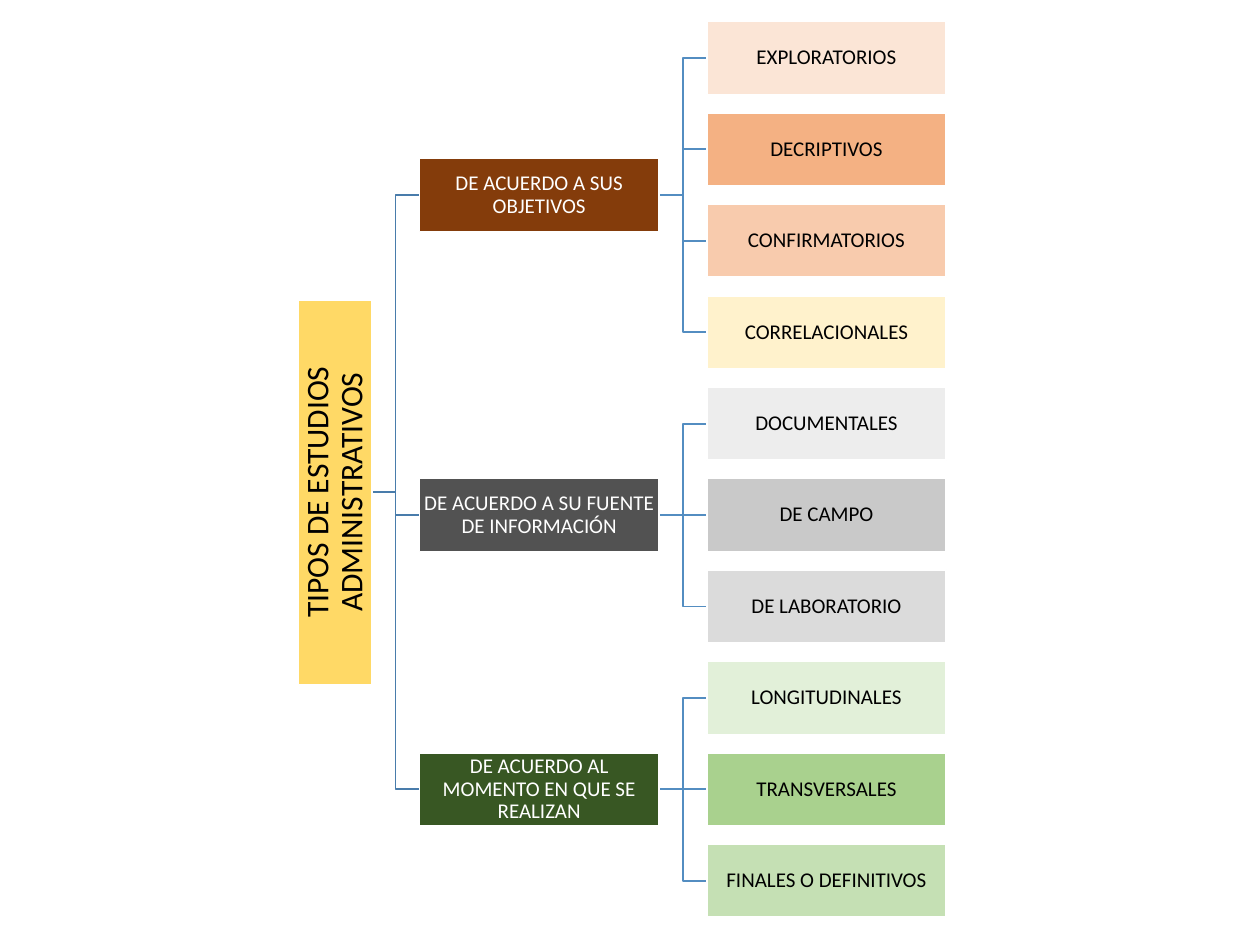
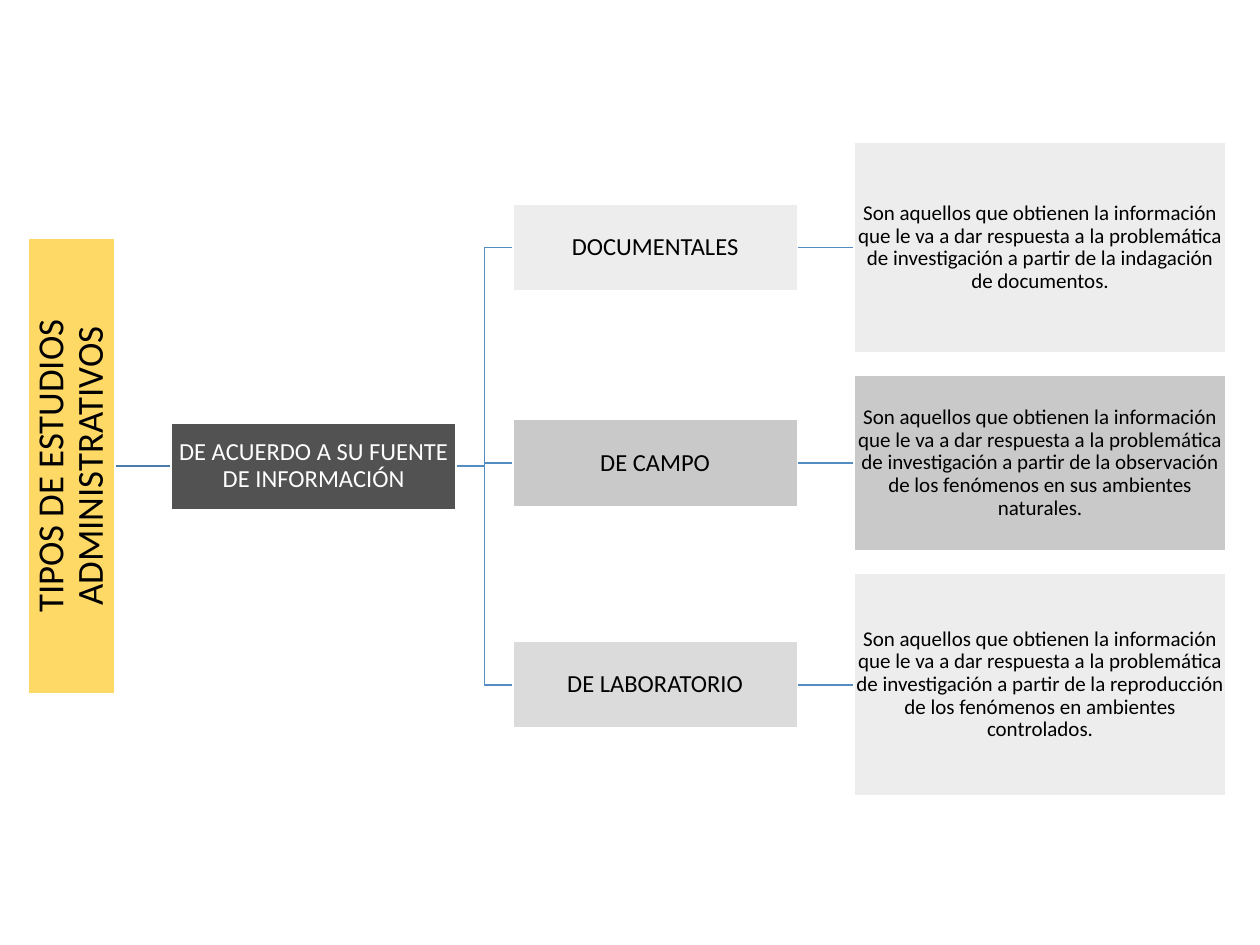
from dataclasses import dataclass, field

from lxml import etree
from pptx import Presentation
from pptx import util as u
from pptx.dml.color import RGBColor
from pptx.enum import shapes, text
from pptx.oxml import ns


@dataclass(frozen=True)
class Theme:
    font: str = "Calibri"
    black: str = "000000"
    white: str = "FFFFFF"
    root_fill: str = "FFD966"
    brown: str = "843C0B"
    charcoal: str = "525252"
    forest: str = "385723"
    oranges: tuple = ("FBE5D6", "F4B183", "F8CBAD", "FFF2CC")
    greys: tuple = ("EDEDED", "C9C9C9", "DBDBDB")
    greens: tuple = ("E2F0D9", "A9D18E", "C5E0B4")
    root_link: str = "497CAB"
    branch_link: str = "538DC1"
    line_width: float = 1
    line_spacing: float = 0.9
    overview_sizes: tuple = (18, 12, 12)
    detail_sizes: tuple = (21, 14, 14, 12)


THEME = Theme()
ROOT_TEXT = "TIPOS DE ESTUDIOS ADMINISTRATIVOS"
SOURCE_TEXT = "DE ACUERDO A SU FUENTE DE INFORMACIÓN"
SOURCE_TYPES = ("DOCUMENTALES", "DE CAMPO", "DE LABORATORIO")
DEFINITION = (
    "Son aquellos que obtienen la información que le va a dar respuesta "
    "a la problemática de investigación a partir de la {}."
)


@dataclass
class Node:
    text: str
    fill: str
    children: list = field(default_factory=list)
    color: str = THEME.black
    height: float = 0
    middle: float = 0


@dataclass(frozen=True)
class Layout:
    left: float
    top: float
    bottom: float
    column_gap: float
    box_height: float
    root_length: float
    widths: tuple
    sizes: tuple

    def column_left(self, level):
        return self.left + sum(self.widths[:level]) + level * self.column_gap

    def column_right(self, level):
        return self.column_left(level) + self.widths[level]


def rgb(value):
    return RGBColor.from_string(value)


def leaves(node):
    if not node.children:
        return [node]
    return [leaf for child in node.children for leaf in leaves(child)]


def center_on_children(node):
    for child in node.children:
        center_on_children(child)
    if node.children:
        node.middle = (node.children[0].middle + node.children[-1].middle) / 2


def arrange(root, layout):
    ends = leaves(root)
    heights = [leaf.height or layout.box_height for leaf in ends]
    gap = (layout.bottom - layout.top - sum(heights)) / (len(ends) - 1)
    top = layout.top
    for leaf, height in zip(ends, heights):
        leaf.middle = top + height / 2
        top += height + gap
    center_on_children(root)


def style_line(line, color):
    line.color.rgb = rgb(color)
    line.width = u.Pt(THEME.line_width)


def add_straight_link(slide, start, end, color):
    connector = slide.shapes.add_connector(
        shapes.MSO_CONNECTOR.STRAIGHT, *map(u.Inches, start + end)
    )
    style_line(connector.line, color)
    etree.SubElement(connector._element.spPr, ns.qn("a:effectLst"))


def add_bent_link(slide, start, end, color):
    bend = (start[0] + end[0]) / 2
    corners = (start, (bend, start[1]), (bend, end[1]), end)
    first, *others = [(u.Inches(x), u.Inches(y)) for x, y in corners]
    builder = slide.shapes.build_freeform(*first)
    builder.add_line_segments(others, close=False)
    shape = builder.convert_to_shape()
    shape.fill.background()
    shape.shadow.inherit = False
    style_line(shape.line, color)


def add_links(slide, node, layout, level=0):
    color = THEME.branch_link if level else THEME.root_link
    for child in node.children:
        start = (layout.column_right(level), node.middle)
        end = (layout.column_left(level + 1), child.middle)
        is_level = abs(start[1] - end[1]) < 0.01
        add_link = add_straight_link if is_level else add_bent_link
        add_link(slide, start, end, color)
        add_links(slide, child, layout, level + 1)


def add_box(slide, node, layout, level):
    width, height = layout.widths[level], node.height or layout.box_height
    center = layout.column_left(level) + width / 2
    if level == 0:
        width, height = layout.root_length, layout.widths[0]
    shape = slide.shapes.add_shape(
        shapes.MSO_SHAPE.RECTANGLE,
        u.Inches(center - width / 2),
        u.Inches(node.middle - height / 2),
        u.Inches(width),
        u.Inches(height),
    )
    shape.rotation = 0 if level else 270
    shape.shadow.inherit = False
    shape.fill.solid()
    shape.fill.fore_color.rgb = rgb(node.fill)
    style_line(shape.line, THEME.white)
    write_label(shape.text_frame, node, layout.sizes[level])


def write_label(frame, node, size):
    frame.text = node.text
    frame.word_wrap = True
    frame.vertical_anchor = text.MSO_ANCHOR.MIDDLE
    frame.margin_left = frame.margin_right = u.Inches(0.01)
    frame.margin_top = frame.margin_bottom = u.Inches(0.01)
    paragraph = frame.paragraphs[0]
    paragraph.alignment = text.PP_ALIGN.CENTER
    paragraph.line_spacing = THEME.line_spacing
    font = paragraph.runs[0].font
    font.name = THEME.font
    font.size = u.Pt(size)
    font.color.rgb = rgb(node.color)


def add_boxes(slide, node, layout, level=0):
    add_box(slide, node, layout, level)
    for child in node.children:
        add_boxes(slide, child, layout, level + 1)


def add_tree_slide(presentation, root, layout):
    slide = presentation.slides.add_slide(presentation.slide_layouts[6])
    arrange(root, layout)
    add_links(slide, root, layout)
    add_boxes(slide, root, layout)


def branch(label, fill, names, fills):
    children = [Node(name, color) for name, color in zip(names, fills)]
    return Node(label, fill, children, THEME.white)


def source_branch():
    return branch(SOURCE_TEXT, THEME.charcoal, SOURCE_TYPES, THEME.greys)


def overview_tree():
    goals = branch(
        "DE ACUERDO A SUS OBJETIVOS",
        THEME.brown,
        ("EXPLORATORIOS", "DECRIPTIVOS", "CONFIRMATORIOS", "CORRELACIONALES"),
        THEME.oranges,
    )
    moments = branch(
        "DE ACUERDO AL MOMENTO EN QUE SE REALIZAN",
        THEME.forest,
        ("LONGITUDINALES", "TRANSVERSALES", "FINALES O DEFINITIVOS"),
        THEME.greens,
    )
    return Node(ROOT_TEXT, THEME.root_fill, [goals, source_branch(), moments])


def source_tree():
    light, medium, _ = THEME.greys
    definitions = (
        ("indagación de documentos", light, 1.67),
        ("observación de los fenómenos en sus ambientes naturales", medium, 1.4),
        ("reproducción de los fenómenos en ambientes controlados", light, 1.77),
    )
    source = source_branch()
    for kind, (ending, fill, height) in zip(source.children, definitions):
        kind.children = [Node(DEFINITION.format(ending), fill, height=height)]
    return Node(ROOT_TEXT, THEME.root_fill, [source])


def main():
    presentation = Presentation()
    presentation.slide_width = u.Inches(10)
    presentation.slide_height = u.Inches(7.5)
    overview = Layout(
        left=2.37, top=0.17, bottom=7.28, column_gap=0.38, box_height=0.58,
        root_length=3.05, widths=(0.58, 1.9, 1.9), sizes=THEME.overview_sizes,
    )
    detail = Layout(
        left=0.22, top=1.13, bottom=6.32, column_gap=0.45, box_height=0.69,
        root_length=3.62, widths=(0.69, 2.26, 2.26, 2.95), sizes=THEME.detail_sizes,
    )
    add_tree_slide(presentation, overview_tree(), overview)
    add_tree_slide(presentation, source_tree(), detail)
    presentation.save("out.pptx")


if __name__ == "__main__":
    main()
